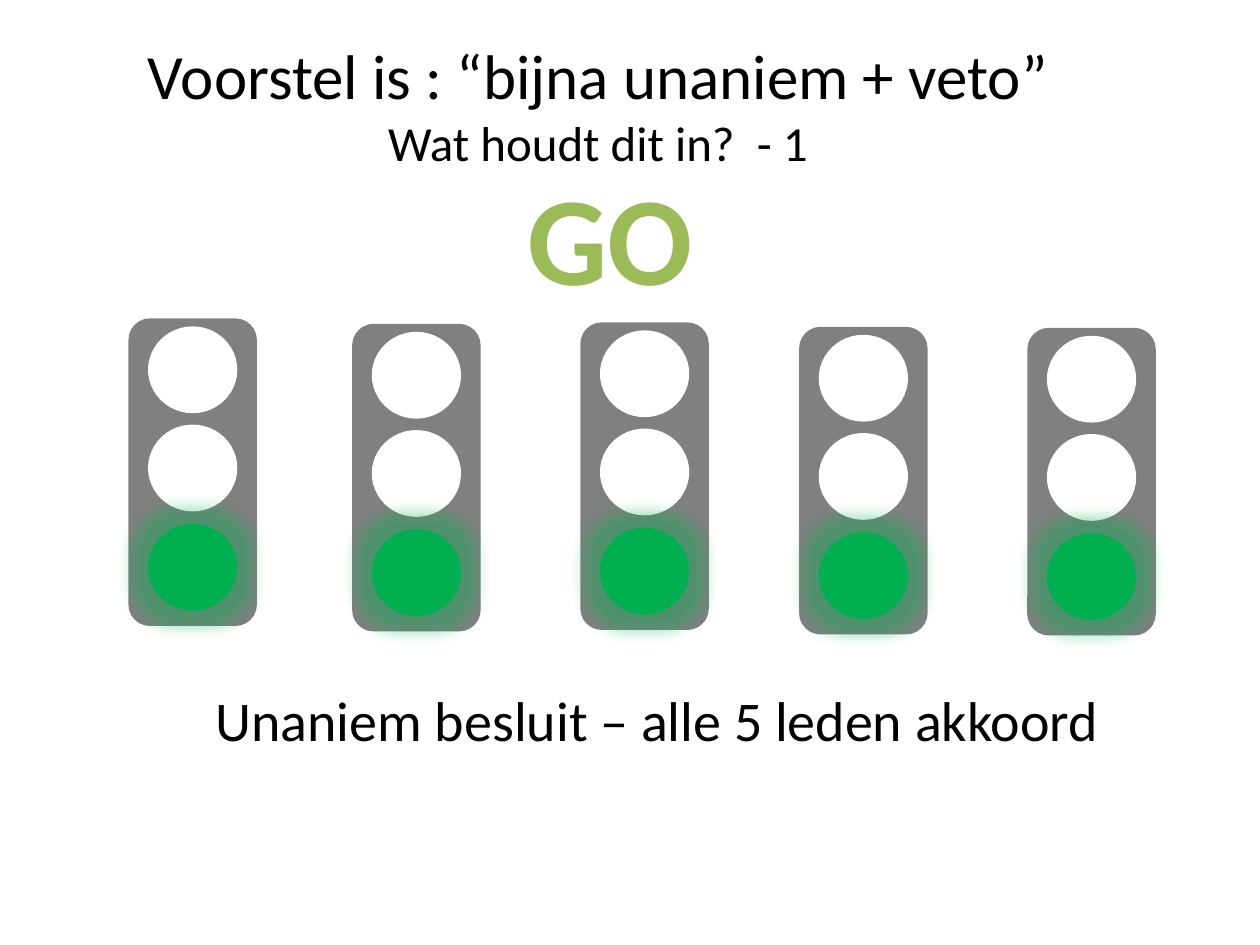
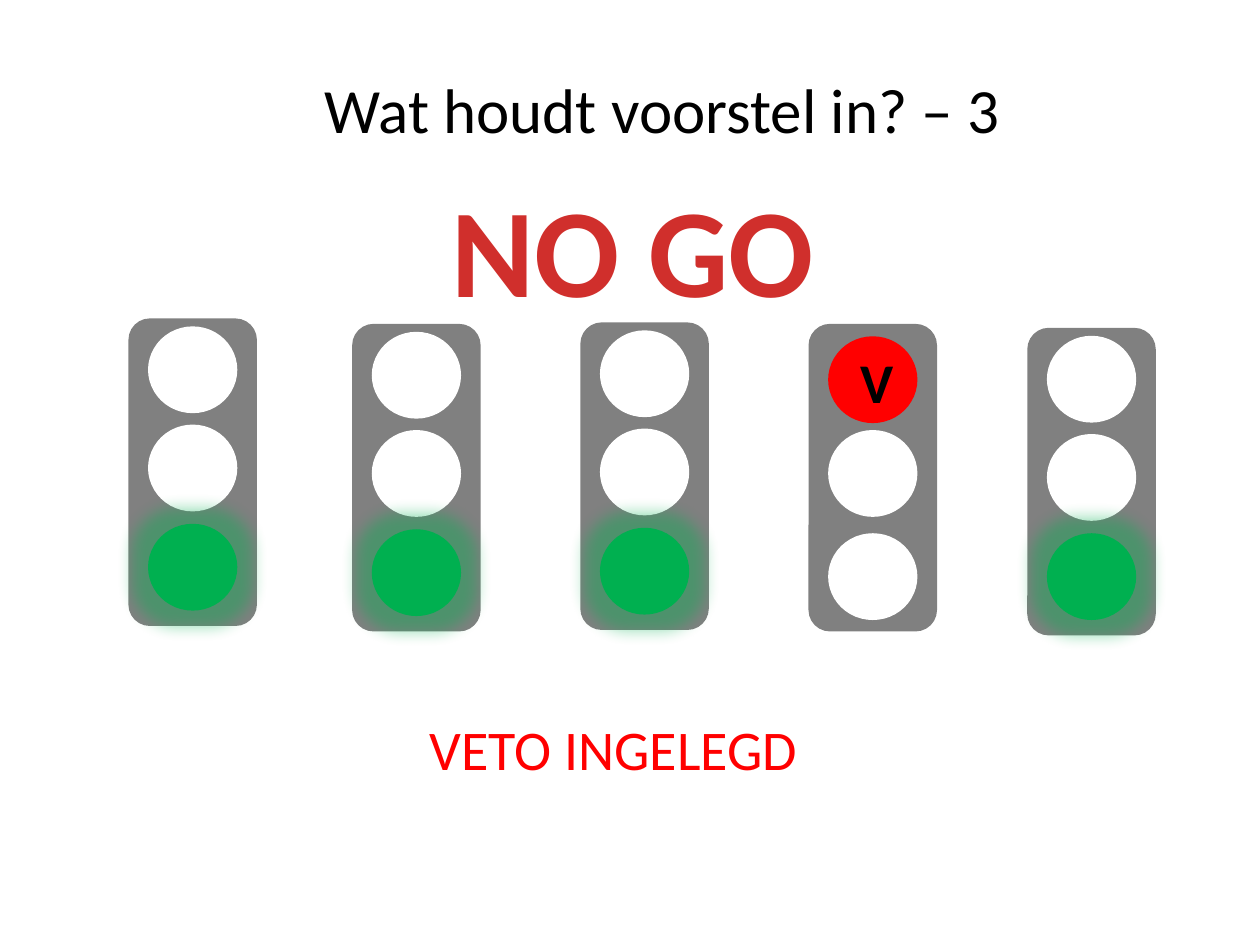
from dataclasses import dataclass, replace

from lxml import etree
from pptx import Presentation
from pptx.dml.color import RGBColor
from pptx.enum.shapes import MSO_SHAPE
from pptx.enum.text import MSO_AUTO_SIZE, PP_ALIGN
from pptx.oxml import parse_xml
from pptx.oxml.ns import nsdecls, qn
from pptx.util import Cm, Pt

ROUNDED = MSO_SHAPE.ROUNDED_RECTANGLE
OVAL = MSO_SHAPE.OVAL
FIT_SHAPE = MSO_AUTO_SIZE.SHAPE_TO_FIT_TEXT
LEFT = PP_ALIGN.LEFT
CENTER = PP_ALIGN.CENTER

FONT = "Calibri"
BLACK = "000000"
WHITE = "FFFFFF"
GREY = "808080"
GREEN = "00B050"
RED = "FF0000"
GO_GREEN = "9BBB59"
GO_OUTLINE = "FEFEFE"
NO_GO_STOPS = ((0, "FC7C7A"), (75, "D02F2C"), (100, "C70500"))

HOUSING_WIDTH, HOUSING_HEIGHT = 2.59, 6.2
LAMP_WIDTH, LAMP_HEIGHT = 1.8, 1.75
LAMP_INSET = (HOUSING_WIDTH - LAMP_WIDTH) / 2
GLOW_RADIUS = Pt(18)


@dataclass(frozen=True)
class TrafficLight:
    left: float
    top: float
    lamps: tuple[str, str, str] = (WHITE, WHITE, GREEN)
    lamp_tops: tuple[float, float, float] = (0.16, 2.14, 4.14)


@dataclass(frozen=True)
class Line:
    text: str
    size: int
    color: str = BLACK
    bold: bool = False


@dataclass(frozen=True)
class Caption:
    left: float
    top: float
    width: float
    height: float
    lines: tuple[Line, ...]
    align: PP_ALIGN = LEFT
    wrap: bool = True


MEMBERS = (
    TrafficLight(2.59, 6.42),
    TrafficLight(7.1, 6.53),
    TrafficLight(11.7, 6.5),
    TrafficLight(16.11, 6.59),
    TrafficLight(20.71, 6.61),
)
VETO_MEMBER = replace(
    MEMBERS[3], left=16.3, top=6.53,
    lamps=(RED, WHITE, WHITE), lamp_tops=(0.25, 2.14, 4.22),
)


def rgb(color: str) -> RGBColor:
    return RGBColor.from_string(color)


def add_filled(shapes, kind, left: float, top: float, width: float, height: float, color: str):
    shape = shapes.add_shape(kind, Cm(left), Cm(top), Cm(width), Cm(height))
    shape.shadow.inherit = False
    shape.fill.solid()
    shape.fill.fore_color.rgb = rgb(color)
    shape.line.fill.background()
    return shape


def add_glow(lamp, color: str) -> None:
    effects = lamp._element.spPr.find(qn("a:effectLst"))
    glow = etree.SubElement(effects, qn("a:glow"), rad=str(GLOW_RADIUS))
    tint = etree.SubElement(glow, qn("a:srgbClr"), val=color)
    etree.SubElement(tint, qn("a:alpha"), val="40000")


def add_traffic_light(slide, light: TrafficLight) -> None:
    shapes = slide.shapes.add_group_shape().shapes
    add_filled(shapes, ROUNDED, light.left, light.top, HOUSING_WIDTH, HOUSING_HEIGHT, GREY)
    for color, offset in zip(light.lamps, light.lamp_tops):
        lamp = add_filled(shapes, OVAL, light.left + LAMP_INSET, light.top + offset,
                          LAMP_WIDTH, LAMP_HEIGHT, color)
        if color == GREEN:
            add_glow(lamp, color)


def add_caption(slide, caption: Caption):
    box = slide.shapes.add_textbox(Cm(caption.left), Cm(caption.top),
                                   Cm(caption.width), Cm(caption.height))
    frame = box.text_frame
    frame.word_wrap = caption.wrap
    frame.auto_size = FIT_SHAPE
    for index, line in enumerate(caption.lines):
        paragraph = frame.add_paragraph() if index else frame.paragraphs[0]
        paragraph.alignment = caption.align
        paragraph.add_run().text = line.text
        font = paragraph.font
        font.name = FONT
        font.size = Pt(line.size)
        font.bold = line.bold
        font.color.rgb = rgb(line.color)
    return box


def style_verdict(verdict, xml: str) -> None:
    run = verdict.text_frame.paragraphs[0].runs[0]
    run._r.get_or_add_rPr().insert(0, parse_xml(xml))


def outline_xml(color: str, width: float) -> str:
    return (f'<a:ln {nsdecls("a")} w="{Pt(width)}"><a:solidFill>'
            f'<a:srgbClr val="{color}"/></a:solidFill></a:ln>')


def gradient_xml(stops: tuple[tuple[int, str], ...]) -> str:
    marks = "".join(f'<a:gs pos="{position * 1000}"><a:srgbClr val="{color}"/></a:gs>'
                    for position, color in stops)
    return (f'<a:gradFill {nsdecls("a")}><a:gsLst>{marks}</a:gsLst>'
            f'<a:lin ang="5400000" scaled="0"/></a:gradFill>')


def add_vote_slide(deck, lights: tuple[TrafficLight, ...], verdict: Caption,
                   verdict_xml: str, captions: tuple[Caption, ...]) -> None:
    slide = deck.slides.add_slide(deck.slide_layouts[6])
    for light in lights:
        add_traffic_light(slide, light)
    style_verdict(add_caption(slide, verdict), verdict_xml)
    for caption in captions:
        add_caption(slide, caption)


def main() -> None:
    deck = Presentation()
    deck.slide_width, deck.slide_height = Cm(25.4), Cm(19.05)

    add_vote_slide(
        deck, MEMBERS,
        Caption(10.36, 3.1, 3.89, 3.33, (Line("GO", 72, GO_GREEN, True),), CENTER, False),
        outline_xml(GO_OUTLINE, 1.5),
        (
            Caption(4.09, 13.69, 18.52, 1.63,
                    (Line("Unaniem besluit – alle 5 leden akkoord", 32),)),
            Caption(1.4, 0.61, 21.31, 3,
                    (Line("Voorstel is : “bijna unaniem + veto”", 36),
                     Line("Wat houdt dit in?  - 1", 28)), CENTER),
        ),
    )
    add_vote_slide(
        deck, (*MEMBERS[:3], VETO_MEMBER, MEMBERS[4]),
        Caption(8.81, 3.33, 7.9, 3.33, (Line("NO GO", 72, NO_GO_STOPS[1][1], True),),
                CENTER, False),
        gradient_xml(NO_GO_STOPS),
        (
            Caption(8.41, 14.27, 18.11, 1.63, (Line("VETO INGELEGD", 32, RED),)),
            Caption(6.3, 1.3, 14.91, 1.8, (Line("Wat houdt voorstel in? – 3", 36),)),
            Caption(17.09, 6.88, 3, 1.63, (Line("V", 32, bold=True),)),
        ),
    )
    deck.save("out.pptx")


if __name__ == "__main__":
    main()
